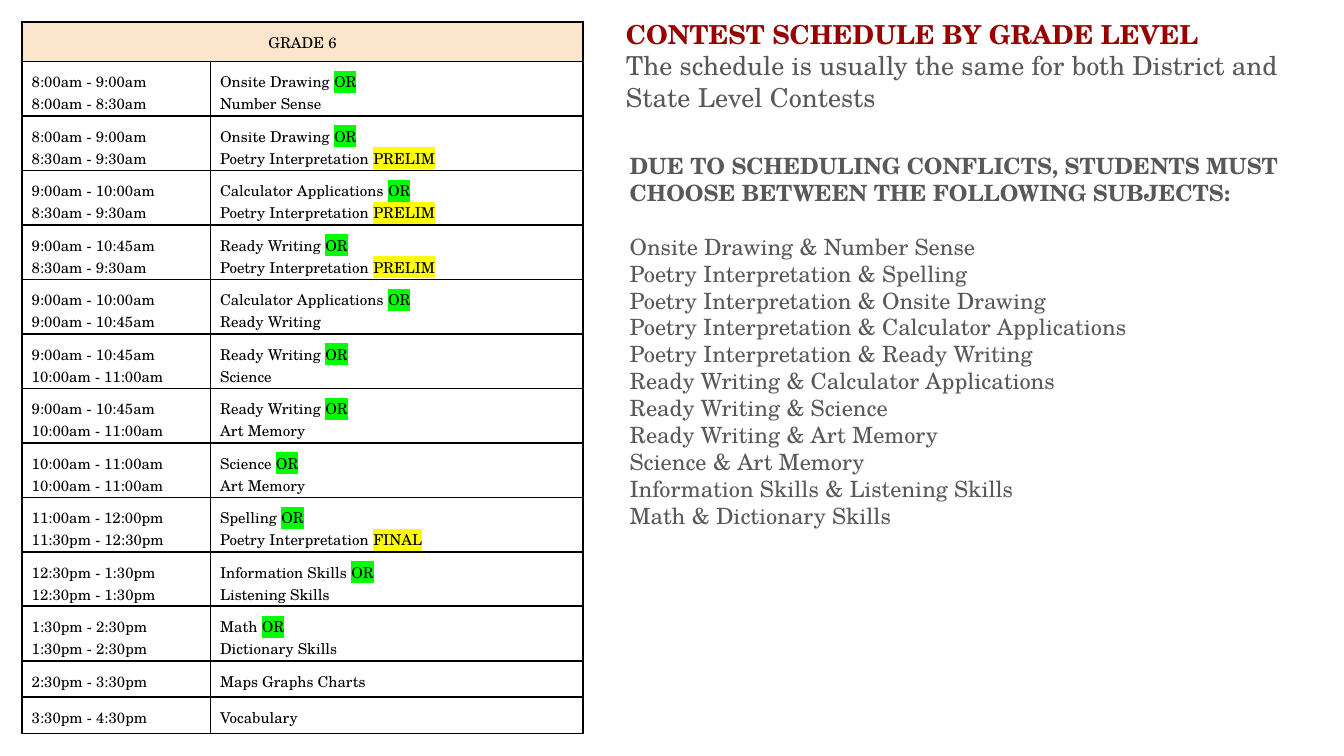
import pptx
import pptx.dml.color
import pptx.enum.text
import pptx.oxml
import pptx.util
from dataclasses import dataclass

Cm = pptx.util.Cm
Pt = pptx.util.Pt


@dataclass(frozen=True)
class Theme:
    font: str = "TeX Gyre Schola"
    red: str = "980000"
    gray: str = "595959"
    ink: str = "000000"
    peach: str = "FCE5CD"
    green: str = "00FF00"
    gold: str = "FFFF00"
    head: int = 14
    body: int = 12
    cell: int = 8


class Deck:
    """Draw the parts of a slide in one theme."""

    def __init__(self, theme, slide):
        self.theme = theme
        self.slide = slide

    def style(self, run, size, color, bold=False):
        run.font.name = self.theme.font
        run.font.size = Pt(size)
        run.font.bold = bold
        run.font.color.rgb = pptx.dml.color.RGBColor.from_string(color)

    def node(self, tag, body):
        space = 'xmlns:a="http://schemas.openxmlformats.org/drawingml/2006/main"'
        return pptx.oxml.parse_xml(f"<a:{tag} {space}>{body}</a:{tag}>")

    def mark(self, run, color):
        light = self.node("highlight", f'<a:srgbClr val="{color}"/>')
        run.font.fill._xPr.find(pptx.oxml.ns.qn("a:solidFill")).addnext(light)

    def text(self, left, top, width, height, lines, size, first):
        box = self.slide.shapes.add_textbox(Cm(left), Cm(top), Cm(width), Cm(height))
        frame = box.text_frame
        frame.word_wrap = True
        frame.margin_left = frame.margin_right = Cm(0.25)
        frame.margin_top = frame.margin_bottom = Cm(0.25)
        frame.text = "\n".join(lines)
        for spot, para in enumerate(frame.paragraphs):
            color = first if spot == 0 else self.theme.gray
            for run in para.runs:
                self.style(run, size, color, spot == 0)
        return frame

    def border(self, cell):
        props = cell._tc.get_or_add_tcPr()
        for spot, side in enumerate(("lnL", "lnR", "lnT", "lnB")):
            fill = f'<a:solidFill><a:srgbClr val="{self.theme.ink}"/></a:solidFill>'
            line = self.node(side, fill)
            line.set("w", str(Pt(1)))
            props.insert(spot, line)

    def cell(self, cell, lines):
        cell.margin_left = cell.margin_right = cell.margin_top = Cm(0.18)
        cell.margin_bottom = Cm(0)
        cell.fill.background()
        self.border(cell)
        frame = cell.text_frame
        frame.text = "\n".join(lines)
        marks = {
            "OR": self.theme.green,
            "PRELIM": self.theme.gold,
            "FINAL": self.theme.gold,
        }
        for para in frame.paragraphs:
            lead, gap, tail = para.text.rpartition(" ")
            if tail in marks:
                para.runs[0].text = lead + gap
                para.add_run().text = tail
            for run in para.runs:
                self.style(run, self.theme.cell, self.theme.ink)
                if run.text in marks:
                    self.mark(run, marks[run.text])

    def table(self, left, top, widths, title, rows):
        heights = [0.74] + [1.03 if len(times) == 2 else 0.69 for times, _ in rows]
        shape = self.slide.shapes.add_table(
            len(heights), len(widths), Cm(left), Cm(top), Cm(sum(widths)), Cm(sum(heights))
        )
        grid = shape.table
        grid.first_row = grid.horz_banding = False
        for col, width in zip(grid.columns, widths):
            col.width = Cm(width)
        for row, height in zip(grid.rows, heights):
            row.height = Cm(height)
        for row, pair in zip(grid.rows, [([title], [""])] + rows):
            for cell, lines in zip(row.cells, pair):
                self.cell(cell, lines)
        head = grid.cell(0, 0)
        head.merge(grid.cell(0, 1))
        head.fill.solid()
        head.fill.fore_color.rgb = pptx.dml.color.RGBColor.from_string(self.theme.peach)
        head.text_frame.paragraphs[0].alignment = pptx.enum.text.PP_ALIGN.CENTER


def main():
    show = pptx.Presentation()
    show.slide_width, show.slide_height = Cm(25.4), Cm(14.29)
    theme = Theme()
    deck = Deck(theme, show.slides.add_slide(show.slide_layouts[6]))

    rows = [
        (["8:00am - 9:00am", "8:00am - 8:30am"], ["Onsite Drawing OR", "Number Sense"]),
        (["8:00am - 9:00am", "8:30am - 9:30am"],
         ["Onsite Drawing OR", "Poetry Interpretation PRELIM"]),
        (["9:00am - 10:00am", "8:30am - 9:30am"],
         ["Calculator Applications OR", "Poetry Interpretation PRELIM"]),
        (["9:00am - 10:45am", "8:30am - 9:30am"],
         ["Ready Writing OR", "Poetry Interpretation PRELIM"]),
        (["9:00am - 10:00am", "9:00am - 10:45am"],
         ["Calculator Applications OR", "Ready Writing"]),
        (["9:00am - 10:45am", "10:00am - 11:00am"], ["Ready Writing OR", "Science"]),
        (["9:00am - 10:45am", "10:00am - 11:00am"], ["Ready Writing OR", "Art Memory"]),
        (["10:00am - 11:00am", "10:00am - 11:00am"], ["Science OR", "Art Memory"]),
        (["11:00am - 12:00pm", "11:30pm - 12:30pm"],
         ["Spelling OR", "Poetry Interpretation FINAL"]),
        (["12:30pm - 1:30pm", "12:30pm - 1:30pm"],
         ["Information Skills OR", "Listening Skills"]),
        (["1:30pm - 2:30pm", "1:30pm - 2:30pm"], ["Math OR", "Dictionary Skills"]),
        (["2:30pm - 3:30pm"], ["Maps Graphs Charts"]),
        (["3:30pm - 4:30pm"], ["Vocabulary"]),
    ]
    deck.table(0.42, 0.42, [3.56, 7.04], "GRADE 6", rows)

    deck.text(11.58, 0.1, 13.18, 2.31, [
        "CONTEST SCHEDULE BY GRADE LEVEL",
        "The schedule is usually the same for both District and State Level Contests",
    ], theme.head, theme.red)

    notice = deck.text(11.65, 2.63, 12.9, 7.7, [
        "DUE TO SCHEDULING CONFLICTS, STUDENTS MUST CHOOSE BETWEEN THE FOLLOWING SUBJECTS:",
        "Onsite Drawing & Number Sense",
        "Poetry Interpretation & Spelling",
        "Poetry Interpretation & Onsite Drawing",
        "Poetry Interpretation & Calculator Applications",
        "Poetry Interpretation & Ready Writing",
        "Ready Writing & Calculator Applications",
        "Ready Writing & Science",
        "Ready Writing & Art Memory",
        "Science & Art Memory",
        "Information Skills & Listening Skills",
        "Math & Dictionary Skills",
    ], theme.body, theme.gray)
    notice.paragraphs[0].space_after = Pt(14.4)

    show.save("out.pptx")


if __name__ == "__main__":
    main()
